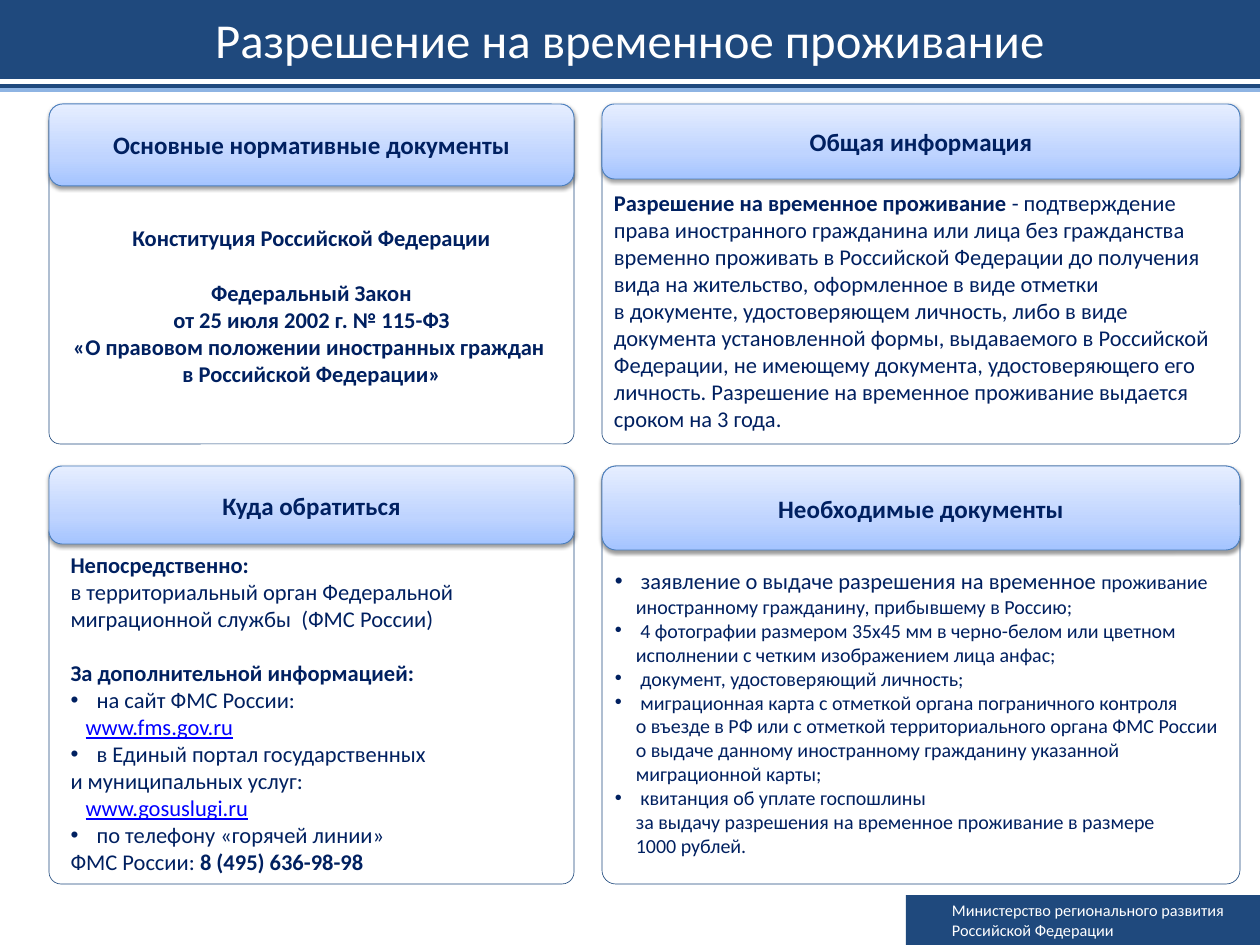
from copy import deepcopy
from lxml import etree
from pptx import Presentation
from pptx.dml.color import RGBColor
from pptx.enum.shapes import MSO_CONNECTOR, MSO_SHAPE
from pptx.enum.text import MSO_ANCHOR, MSO_AUTO_SIZE, PP_ALIGN
from pptx.oxml.ns import qn
from pptx.util import Pt

PX = 10160
FONT = "Calibri"
NAVY = RGBColor(0x1F, 0x49, 0x7D)
INK = RGBColor(0x00, 0x20, 0x60)
SKY = RGBColor(0x8E, 0xB4, 0xE3)
EDGE = RGBColor(0x4B, 0x7E, 0xBC)
LINK = RGBColor(0x00, 0x00, 0xFF)
WHITE = RGBColor(0xFF, 0xFF, 0xFF)
BLACK = RGBColor(0x00, 0x00, 0x00)
GRAD = [(0, RGBColor(0xA4, 0xC4, 0xFF)), (0.35, RGBColor(0xBF, 0xD4, 0xFF)),
        (1, RGBColor(0xE6, 0xEE, 0xFF))]
RECT, ROUND = MSO_SHAPE.RECTANGLE, MSO_SHAPE.ROUNDED_RECTANGLE
LINE = MSO_CONNECTOR.STRAIGHT
LEFT, MID = PP_ALIGN.LEFT, PP_ALIGN.CENTER
TOP, CENTER = MSO_ANCHOR.TOP, MSO_ANCHOR.MIDDLE

TITLE = "Разрешение на временное проживание"
FOOTER = "Министерство регионального развития\nРоссийской Федерации"
RULES = [(86, NAVY), (90, SKY)]
BOLD = {"bold": True}
URL = {"color": LINK, "line": True}
BIG = {"size": 18}
DOT = {"dot": True}
GAP = {"gap": 22}

LAWS = [
    ("Конституция Российской Федерации", {}),
    ("Федеральный Закон", GAP),
    ("от 25 июля 2002 г. № 115-ФЗ", {}),
    ("«О правовом положении иностранных граждан ", {}),
    ("в Российской Федерации»", {}),
]
ABOUT = [([
    ("Разрешение на временное проживание ", BOLD),
    ("- подтверждение права иностранного гражданина или лица без гражданства "
     "временно проживать в Российской Федерации до получения вида на жительство, "
     "оформленное в виде отметки \nв документе, удостоверяющем личность, либо в виде "
     "документа установленной формы, выдаваемого в Российской Федерации, не имеющему "
     "документа, удостоверяющего его личность. Разрешение на временное проживание "
     "выдается сроком на 3 года.", {})], {})]
WHERE = [
    ([("Непосредственно:", BOLD)], {}),
    ("в территориальный орган Федеральной миграционной службы  (ФМС России)", {}),
    ([("За дополнительной информацией:", BOLD)], GAP),
    (" на сайт ФМС России:", DOT),
    ([("www.fms.gov.ru", URL)], {"indent": 15}),
    (" в Единый портал государственных", DOT),
    ("и муниципальных услуг:", {}),
    ([("www.gosuslugi.ru", URL)], {"indent": 15}),
    (" по телефону «горячей линии»", DOT),
    ([("ФМС России: ", {}), ("8 (495) 636-98-98", BOLD)], {}),
]
PAPERS = [
    ([(" заявление о выдаче разрешения на временное ", BIG),
      ("проживание иностранному гражданину, прибывшему в Россию;", {})], DOT),
    (" 4 фотографии размером 35x45 мм в черно-белом или цветном "
     "исполнении с четким изображением лица анфас;", DOT),
    (" документ, удостоверяющий личность;", DOT),
    (" миграционная карта с отметкой органа пограничного контроля \n"
     "о въезде в РФ или с отметкой территориального органа ФМС России \n"
     "о выдаче данному иностранному гражданину указанной миграционной карты;", DOT),
    (" квитанция об уплате госпошлины \n"
     "за выдачу разрешения на временное проживание в размере \n1000 рублей.", DOT),
]
COLS = [(49, 525), (602, 638)]
ROWS = [(104, 444), (466, 884)]
CARDS = [
    dict(col=0, row=0, head="Основные нормативные документы", high=82, drop=6,
         start=224, text=LAWS, form=dict(size=18, bold=True, align=MID)),
    dict(col=1, row=0, head="Общая информация", high=75, drop=16,
         start=189, text=ABOUT, form=dict(size=18)),
    dict(col=0, row=1, head="Куда обратиться", high=78, drop=54,
         start=550, text=WHERE, form=dict(size=18), left=18),
    dict(col=1, row=1, head="Необходимые документы", high=84, drop=0,
         start=566, text=PAPERS, form=dict(size=16)),
]


def write(shape, text, size=18, color=INK, bold=False, align=LEFT,
          anchor=CENTER, inset=(9, 5, 9, 5), hang=21):
    frame = shape.text_frame
    frame.word_wrap = True
    frame.auto_size = MSO_AUTO_SIZE.NONE
    frame.vertical_anchor = anchor
    (frame.margin_left, frame.margin_top,
     frame.margin_right, frame.margin_bottom) = [n * PX for n in inset]
    paras = [(text, {})] if isinstance(text, str) else text
    for i, (runs, look) in enumerate(paras):
        para = frame.add_paragraph() if i else frame.paragraphs[0]
        para.alignment = align
        if "gap" in look:
            para.space_before = Pt(look["gap"])
        props = para._p.get_or_add_pPr()
        if "dot" in look:
            props.set("marL", str(hang * PX))
            props.set("indent", str(-hang * PX))
            etree.SubElement(props, qn("a:buFont")).set("typeface", "Arial")
            etree.SubElement(props, qn("a:buChar")).set("char", "•")
        elif "indent" in look:
            props.set("marL", str(look["indent"] * PX))
        for words, form in [(runs, {})] if isinstance(runs, str) else runs:
            for j, part in enumerate(words.split("\n")):
                if j:
                    para.add_line_break()
                run = para.add_run()
                run.text = part
                font = run.font
                font.name = FONT
                font.size = Pt(form.get("size", size))
                font.bold = form.get("bold", bold)
                font.underline = form.get("line", False)
                font.color.rgb = form.get("color", color)
                if j:
                    run._r.getprevious().append(deepcopy(run._r.rPr))


def box(slide, kind, area, fill=None, edge=None, width=0.5):
    shape = slide.shapes.add_shape(kind, *[n * PX for n in area])
    shape.shadow.inherit = False
    if fill is None:
        shape.fill.background()
    else:
        shape.fill.solid()
        shape.fill.fore_color.rgb = fill
    if edge is None:
        shape.line.fill.background()
    else:
        shape.line.color.rgb = edge
        shape.line.width = Pt(width)
    return shape


def shade(shape):
    fill = shape.fill
    fill.gradient()
    fill.gradient_angle = 90
    first = shape._element.spPr.find(".//" + qn("a:gs"))
    first.addnext(deepcopy(first))
    for stop, (pos, color) in zip(fill.gradient_stops, GRAD):
        stop.position = pos
        stop.color.rgb = color
    glow = etree.SubElement(shape._element.spPr.find(qn("a:effectLst")),
                            qn("a:outerShdw"), blurRad=str(Pt(3.1)),
                            dist=str(Pt(1.6)), dir="5400000", rotWithShape="0")
    tone = etree.SubElement(glow, qn("a:srgbClr"), val=str(BLACK))
    etree.SubElement(tone, qn("a:alpha"), val="38000")


def card(slide, col, row, head, high, drop, start, text, form, left=9):
    x, wide = COLS[col]
    top, end = ROWS[row]
    y = top + drop
    body = box(slide, ROUND, (x, y, wide, end - y), edge=NAVY)
    body.adjustments[0] = 0.033
    write(body, text, anchor=TOP, inset=(left, start - y - 3, 9, 0), **form)
    cap = box(slide, ROUND, (x, top, wide, high), edge=EDGE, width=0.75)
    shade(cap)
    write(cap, head, size=20, bold=True, align=MID, inset=(0, 5, 0, 5))


def main():
    deck = Presentation()
    deck.slide_width, deck.slide_height = 1260 * PX, 945 * PX
    slide = deck.slides.add_slide(deck.slide_layouts[5])
    title = slide.shapes.title
    title.left, title.top, title.width, title.height = 0, 0, 1260 * PX, 79 * PX
    title.fill.solid()
    title.fill.fore_color.rgb = NAVY
    write(title, TITLE, size=39, color=WHITE, align=MID, inset=(13, 6, 13, 6))
    for y, color in RULES:
        rule = slide.shapes.add_connector(LINE, 0, y * PX, 1260 * PX, y * PX)
        rule.line.color.rgb = color
        rule.line.width = Pt(3)
        etree.SubElement(rule._element.spPr, qn("a:effectLst"))
    foot = box(slide, RECT, (906, 895, 354, 50), fill=NAVY)
    write(foot, FOOTER, size=13, color=WHITE, inset=(46, 5, 9, 5))
    for item in CARDS:
        card(slide, **item)
    deck.save("out.pptx")


if __name__ == "__main__":
    main()
